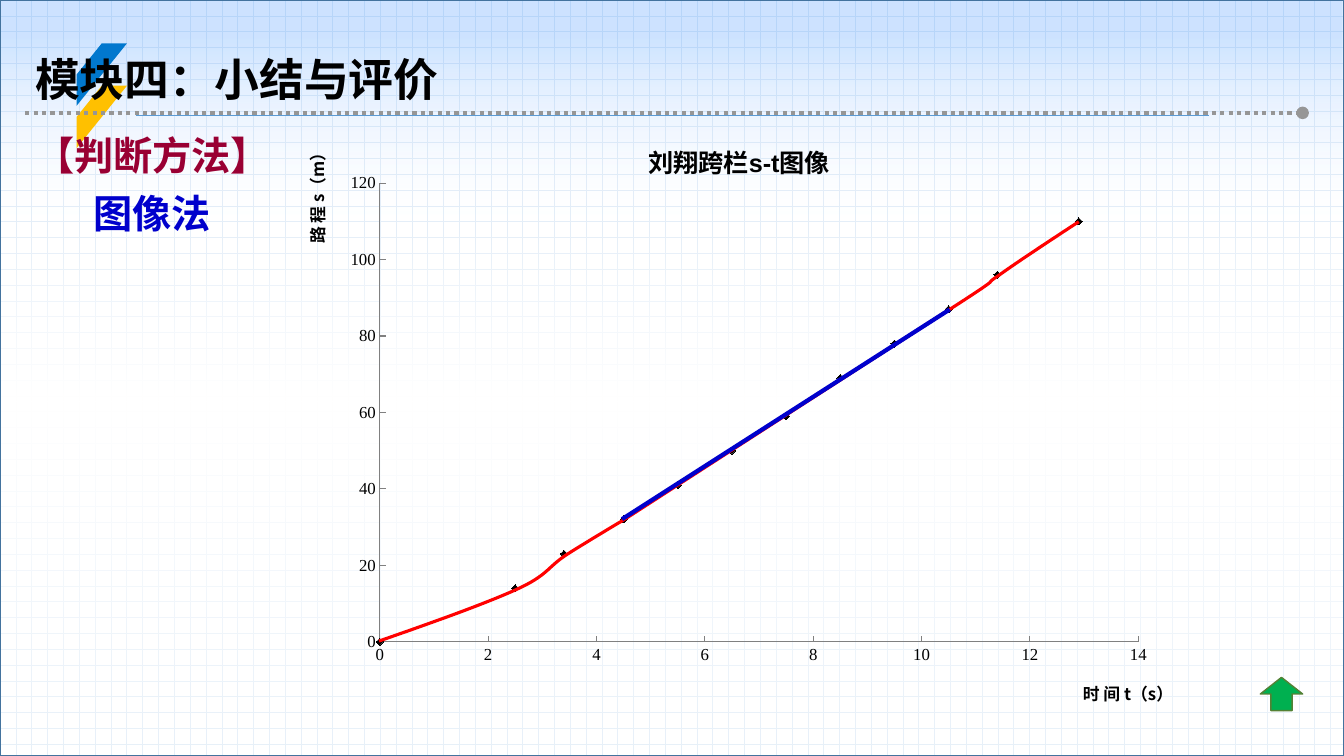
from lxml import etree
from pptx import Presentation
from pptx import util as u
from pptx.chart.data import XyChartData
from pptx.dml.color import RGBColor
from pptx.enum import chart as ch, dml, shapes
from pptx.oxml import parse_xml
from pptx.oxml.ns import nsdecls, qn

BLACK = RGBColor(0, 0, 0)
WHITE = RGBColor(255, 255, 255)
GRID = RGBColor(0xE4, 0xEE, 0xF8)
FRAME = RGBColor(0x43, 0x73, 0x9E)
RULE = RGBColor(0x5B, 0x9B, 0xD5)
GREY = RGBColor(0x96, 0x96, 0x96)
AXIS = RGBColor(0x80, 0x80, 0x80)
STRIPE_BLUE = RGBColor(0x01, 0x78, 0xCE)
STRIPE_YELLOW = RGBColor(0xFF, 0xC0, 0x00)
MAROON = RGBColor(0x99, 0x00, 0x33)
BLUE = RGBColor(0x00, 0x00, 0xCC)
RED = RGBColor(0xFF, 0, 0)
GREEN = RGBColor(0x00, 0xB0, 0x50)
DARK_GREEN = RGBColor(0x53, 0x81, 0x35)

SANS = "Noto Sans CJK SC"
HEAD = "Noto Sans CJK JP"
SERIF = "Times New Roman"

TITLE = "刘翔跨栏s-t图像"
TIMES = [0, 2.5, 3.4, 4.5, 5.5, 6.5, 7.5, 8.5, 9.5, 10.5, 11.4, 12.9]
DISTANCES = [0, 14, 23, 32, 41, 50, 59, 69, 78, 87, 96, 110]

# Position %, colour, opacity %
SKY = [(5, "0072FF", 19), (30, "FFFFFF", 1), (53, "FFFFFF", 100), (100, "FFFFFF", 10)]

CURVE_START = (3.76, 6.36)
CURVES_BEFORE = [
    ((4.28, 6.18), (4.81, 5.99), (5.12, 5.85)),
    ((5.43, 5.71), (5.43, 5.63), (5.61, 5.51)),
    ((5.78, 5.4), (6.2, 5.15), (6.2, 5.15)),
]
STEADY_END = (9.42, 3.07)
CURVES_AFTER = [
    ((10.04, 2.67), (9.7, 2.87), (9.91, 2.73)),
    ((10.12, 2.58), (10.41, 2.39), (10.7, 2.2)),
]


def bezier_points(start, curves, steps=16):
    """Points along a chain of cubic curves, without the start."""
    points = []
    for a, b, end in curves:
        for i in range(1, steps + 1):
            t = i / steps
            s = 1 - t
            points.append(tuple(
                s**3 * p0 + 3 * s * s * t * p1 + 3 * s * t * t * p2 + t**3 * p3
                for p0, p1, p2, p3 in zip(start, a, b, end)))
        start = end
    return points


def place(parent, index, x, y, w=None, h=None):
    """Put a manual layout, in fractions of the chart, into a chart part."""
    for old in parent.findall(qn("c:layout")):
        parent.remove(old)
    layout = etree.Element(qn("c:layout"))
    manual = etree.SubElement(layout, qn("c:manualLayout"))
    values = {"xMode": "edge", "yMode": "edge", "x": x, "y": y}
    if w:
        values = {"layoutTarget": "inner", **values, "w": w, "h": h}
    for tag, value in values.items():
        etree.SubElement(manual, qn("c:" + tag)).set("val", str(value))
    parent.insert(index, layout)


class Slide:
    def __init__(self, prs):
        self.s = prs.slides.add_slide(prs.slide_layouts[6])
        fill = self.s.background.fill
        fill.patterned()
        fill.pattern = dml.MSO_PATTERN.DOTTED_GRID
        fill.fore_color.rgb = GRID
        fill.back_color.rgb = WHITE

    def font(self, p, size, color, name):
        p.font.size = u.Pt(size)
        p.font.bold = True
        p.font.color.rgb = color
        p.font.name = name
        props = p._p.get_or_add_pPr().find(qn("a:defRPr"))
        etree.SubElement(props, qn("a:ea")).set("typeface", name)

    def shape(self, kind, x, y, w, h, fill=None, line=None):
        sp = self.s.shapes.add_shape(kind, *map(u.Inches, (x, y, w, h)))
        sp.shadow.inherit = False
        if fill is not None:
            sp.fill.solid()
            sp.fill.fore_color.rgb = fill
        if line is None:
            sp.line.fill.background()
        else:
            sp.line.color.rgb = line
            sp.line.width = u.Pt(1)
        return sp

    def sky(self, w, h):
        sp = self.shape(shapes.MSO_SHAPE.RECTANGLE, 0, 0, w, h, line=FRAME)
        stops = "".join(
            f'<a:gs pos="{pos * 1000}"><a:srgbClr val="{color}">'
            f'<a:alpha val="{alpha * 1000}"/></a:srgbClr></a:gs>'
            for pos, color, alpha in SKY)
        sp._element.spPr.find(qn("a:prstGeom")).addnext(parse_xml(
            f'<a:gradFill {nsdecls("a")}><a:gsLst>{stops}</a:gsLst>'
            '<a:lin ang="5400000" scaled="0"/></a:gradFill>'))

    def line(self, start, end, color, width, dash=None, tail=None):
        c = self.s.shapes.add_connector(
            shapes.MSO_CONNECTOR.STRAIGHT, *map(u.Inches, start + end))
        c.line.color.rgb = color
        c.line.width = u.Pt(width)
        if dash:
            c.line.dash_style = dash
        if tail:
            etree.SubElement(c.line._get_or_add_ln(), qn("a:tailEnd")).set("type", tail)
        etree.SubElement(c._element.spPr, qn("a:effectLst"))

    def curve(self, start, points, color, width):
        builder = self.s.shapes.build_freeform(*map(u.Inches, start))
        builder.add_line_segments(
            [tuple(map(u.Inches, pt)) for pt in points], close=False)
        sp = builder.convert_to_shape()
        sp.shadow.inherit = False
        sp.fill.background()
        sp.line.color.rgb = color
        sp.line.width = u.Pt(width)

    def text(self, words, x, y, w, h, size, color, name=SANS):
        tf = self.s.shapes.add_textbox(*map(u.Inches, (x, y, w, h))).text_frame
        tf.word_wrap = True
        p = tf.paragraphs[0]
        p.text = words
        self.font(p, size, color, name)

    def chart_title(self, title, words, size, x, y, name=SANS, rotation=0):
        tf = title.text_frame
        tf.text = words
        self.font(tf.paragraphs[0], size, BLACK, name)
        tf._txBody.find(qn("a:bodyPr")).set("rot", str(rotation * 60000))
        place(title._element, 1, x, y)

    def axis(self, axis, top, step):
        axis.minimum_scale, axis.maximum_scale, axis.major_unit = 0, top, step
        axis.has_major_gridlines = False
        axis.major_tick_mark = ch.XL_TICK_MARK.INSIDE
        axis.minor_tick_mark = ch.XL_TICK_MARK.NONE
        axis.format.line.color.rgb = AXIS
        font = axis.tick_labels.font
        font.size, font.name, font.color.rgb = u.Pt(12), SERIF, BLACK

    def scatter(self, x, y, w, h):
        data = XyChartData()
        series = data.add_series(TITLE)
        for time, distance in zip(TIMES, DISTANCES):
            series.add_data_point(time, distance)
        chart = self.s.shapes.add_chart(
            ch.XL_CHART_TYPE.XY_SCATTER, *map(u.Inches, (x, y, w, h)), data).chart
        chart.has_legend = False
        chart.font.size, chart.font.color.rgb = u.Pt(10), BLACK
        plot = chart.plots[0]
        plot.vary_by_categories = False
        ser = plot.series[0]
        ser.smooth = False
        ser.format.line.fill.background()
        ser.marker.style, ser.marker.size = ch.XL_MARKER_STYLE.DIAMOND, 5
        ser.marker.format.fill.solid()
        ser.marker.format.fill.fore_color.rgb = BLACK
        ser.marker.format.line.color.rgb = BLACK
        self.axis(chart.category_axis, 14, 2)
        self.axis(chart.value_axis, 120, 20)
        self.chart_title(chart.chart_title, TITLE, 18, 0.39, 0.04, "Arial")
        self.chart_title(chart.category_axis.axis_title, "时 间 t（s）", 12, 0.86, 0.94)
        self.chart_title(chart.value_axis.axis_title, "路 程 s（m）", 12, 0.02, 0.04,
                         rotation=-90)
        place(chart._chartSpace.chart.plotArea, 0, 0.106, 0.11, 0.817, 0.774)


def main():
    prs = Presentation()
    prs.slide_width, prs.slide_height = u.Inches(13.33), u.Inches(7.5)
    s = Slide(prs)
    s.sky(13.33, 7.5)
    for y, color in ((0.43, STRIPE_BLUE), (0.85, STRIPE_YELLOW)):
        s.shape(shapes.MSO_SHAPE.DIAGONAL_STRIPE, 0.76, y, 0.5, 0.62, color)
    s.line((1.35, 1.14), (11.99, 1.14), RULE, 0.5)
    s.line((0.25, 1.12), (12.92, 1.12), GREY, 3, dml.MSO_LINE.ROUND_DOT, "oval")
    s.text("【判断方法】", 0.25, 1.25, 2.58, 0.57, 28, MAROON)
    s.text("模块四：小结与评价", 0.25, 0.46, 4.66, 0.64, 32, BLACK, HEAD)
    s.text("图像法", 0.83, 1.83, 1.67, 0.57, 28, BLUE)
    s.shape(shapes.MSO_SHAPE.UP_ARROW, 12.5, 6.72, 0.42, 0.33, GREEN, DARK_GREEN)
    s.scatter(2.79, 1.17, 9.21, 5.88)
    s.curve(CURVE_START,
            bezier_points(CURVE_START, CURVES_BEFORE) + [STEADY_END]
            + bezier_points(STEADY_END, CURVES_AFTER), RED, 2.25)
    s.line((6.17, 5.15), STEADY_END, BLUE, 3)
    prs.save("out.pptx")


if __name__ == "__main__":
    main()
